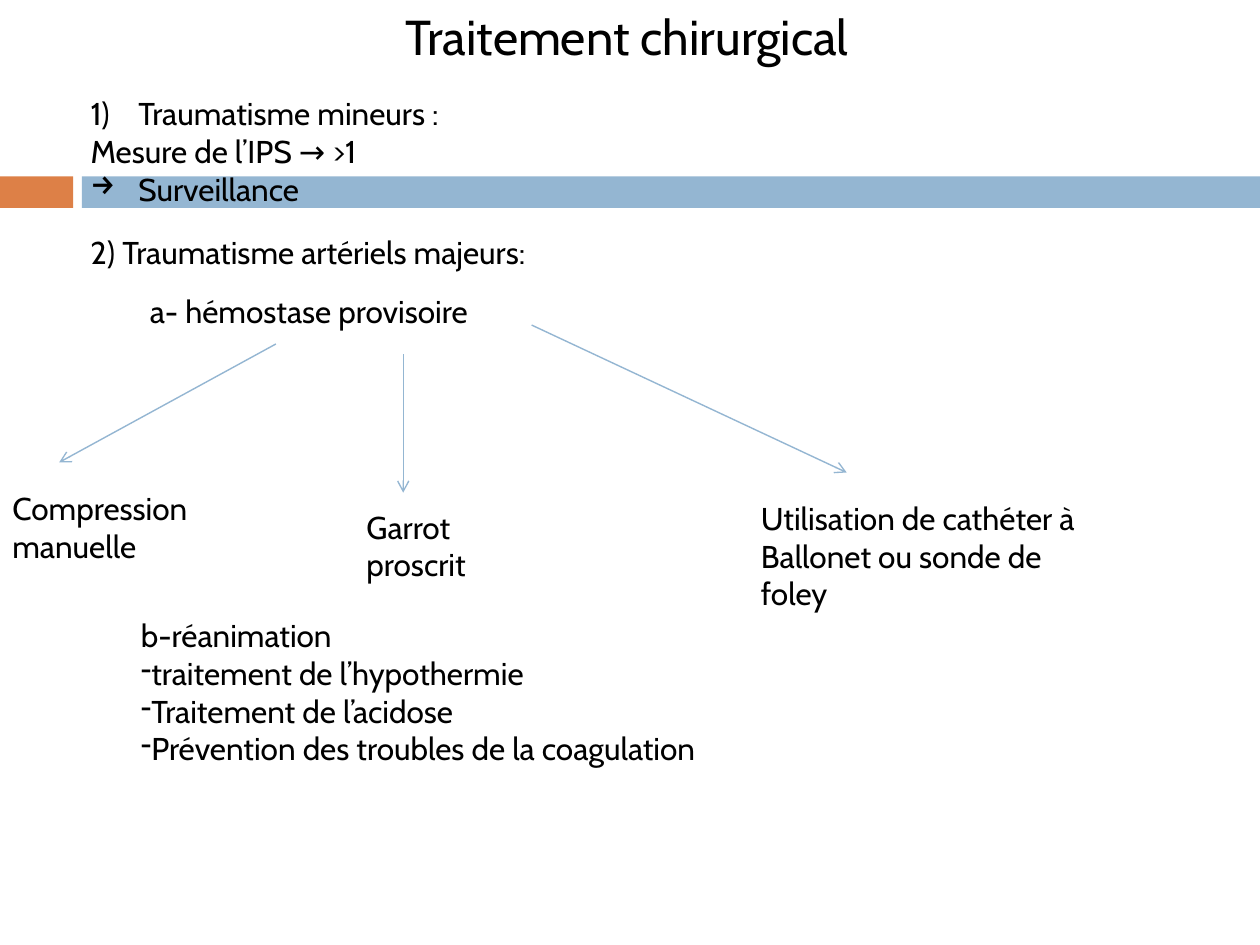
from lxml import etree
from pptx import Presentation
from pptx.dml.color import RGBColor
from pptx.enum import shapes, text
from pptx.oxml import ns
from pptx.util import Inches, Pt

FONT, BLACK, BLUE, ORANGE = "Cabin", "000000", "94B6D2", "DD8047"
HANGING = 0.38


def color(value):
    """Turn a hex string into a colour."""
    return RGBColor.from_string(value)


def write_paragraph(paragraph, wording, size=18, bullet=None, hanging=0):
    """Fill one paragraph, with an optional bullet and hanging indent."""
    properties = paragraph._p.get_or_add_pPr()
    properties.set("marL", str(Inches(hanging)))
    properties.set("indent", str(-Inches(hanging)))
    tag, attributes = {
        None: ("a:buNone", {}),
        "1)": ("a:buAutoNum", {"type": "arabicParenR"}),
    }.get(bullet, ("a:buChar", {"char": bullet}))
    etree.SubElement(properties, ns.qn(tag), attributes)
    paragraph.alignment = text.PP_ALIGN.LEFT
    run = paragraph.add_run()
    run.text = wording
    for name, value in {"name": FONT, "size": Pt(size)}.items():
        setattr(run.font, name, value)
    run.font.color.rgb = color(BLACK)


def place_title(slide, box, wording):
    """Move the title placeholder to the box and fill it."""
    title = slide.shapes.title
    for name, value in zip(("left", "top", "width", "height"), box):
        setattr(title, name, Inches(value))
    frame = title.text_frame
    layout = {
        "vertical_anchor": text.MSO_ANCHOR.TOP,
        "auto_size": text.MSO_AUTO_SIZE.NONE,
        "word_wrap": True,
    }
    for name, value in layout.items():
        setattr(frame, name, value)
    write_paragraph(frame.paragraphs[0], wording, size=28)


def place_band(slide, box, fill):
    """Draw one flat part of the coloured band."""
    band = slide.shapes.add_shape(shapes.MSO_SHAPE.RECTANGLE, *map(Inches, box))
    band.shadow.inherit = False
    band.fill.solid()
    band.fill.fore_color.rgb = color(fill)
    band.line.fill.background()


def place_text(slide, box, lines, hanging=0):
    """Write (wording, bullet) lines in a text box."""
    frame = slide.shapes.add_textbox(*map(Inches, box)).text_frame
    frame.word_wrap = True
    for index, (wording, bullet) in enumerate(lines):
        paragraph = frame.add_paragraph() if index else frame.paragraphs[0]
        write_paragraph(paragraph, wording, bullet=bullet, hanging=hanging)


def place_arrow(slide, start, end):
    """Draw a thin arrow from start to end."""
    arrow = slide.shapes.add_connector(
        shapes.MSO_CONNECTOR.STRAIGHT, *map(Inches, (*start, *end)))
    arrow.line.color.rgb = color(BLUE)
    arrow.line.width = Pt(0.79)
    etree.SubElement(arrow.line._get_or_add_ln(), ns.qn("a:tailEnd"), type="arrow")
    etree.SubElement(arrow._element.spPr, ns.qn("a:effectLst"))


def place_minor_trauma(slide, box):
    """Write the section on minor trauma."""
    place_text(slide, box, [
        ("Traumatisme mineurs :", "1)"),
        ("Mesure de l’IPS → >1", None),
        ("Surveillance", "→"),
    ], HANGING)


def place_hemostasis(slide, box):
    """Write the major trauma section and its three branches."""
    left, top, width, height = box
    place_text(slide, (left, top, width, height),
               [("2) Traumatisme artériels majeurs:", None)], HANGING)
    place_text(slide, (left + 0.47, top + 0.47, 2.89, height),
               [("a- hémostase provisoire", None)])
    branches = [
        ((2.19, 2.73), (0.47, 3.67), (0, 3.83, 1.69, 0.71),
         ("Compression", "manuelle")),
        ((3.2, 2.81), (3.2, 3.91), (2.81, 3.98, 1.03, 0.71),
         ("Garrot", "proscrit")),
        ((4.22, 2.58), (6.72, 3.75), (5.94, 3.91, 2.88, 0.71),
         ("Utilisation de cathéter à", "Ballonet ou sonde de foley")),
    ]
    for start, end, label_box, label in branches:
        place_arrow(slide, start, end)
        place_text(slide, label_box, [(line, None) for line in label])


def place_resuscitation(slide, box):
    """Write the resuscitation list."""
    measures = ("traitement de l’hypothermie", "Traitement de l’acidose",
                "Prévention des troubles de la coagulation")
    place_text(slide, box, [("b-réanimation", None),
                            *((measure, "-") for measure in measures)])


def main():
    """Build and save the slide."""
    deck = Presentation()
    deck.slide_width, deck.slide_height = Inches(10), Inches(7.5)
    slide = deck.slides.add_slide(deck.slide_layouts[5])
    place_band(slide, (0, 1.4, 0.58, 0.25), ORANGE)
    place_band(slide, (0.65, 1.4, 9.35, 0.25), BLUE)
    place_title(slide, (3.12, 0, 4.77, 0.86), "Traitement chirurgical")
    place_minor_trauma(slide, (0.62, 0.7, 3.15, 1.31))
    place_hemostasis(slide, (0.62, 1.8, 3.96, 0.4))
    place_resuscitation(slide, (1.02, 4.84, 5.04, 1.31))
    deck.save("out.pptx")


if __name__ == "__main__":
    main()
